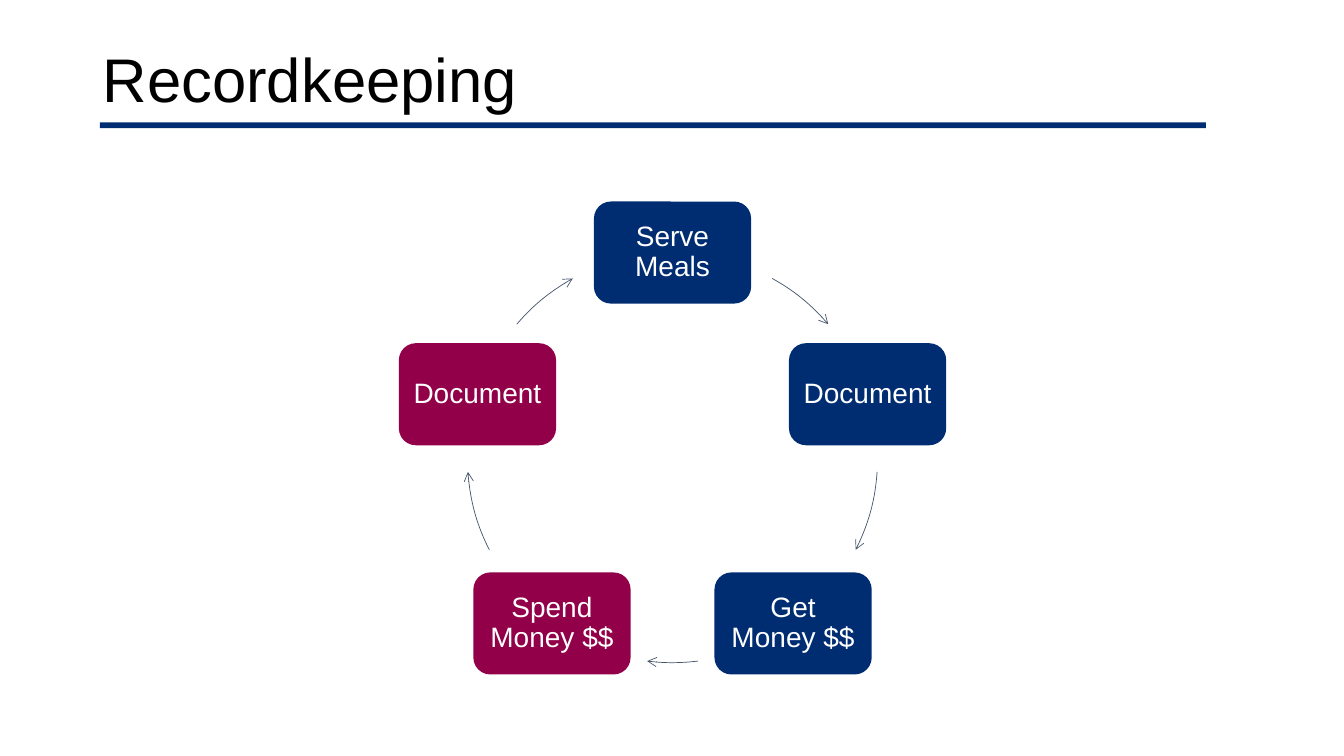
"""Build the recordkeeping cycle slide."""
import math
from dataclasses import dataclass

from lxml import etree
from pptx import Presentation
from pptx import util as u
from pptx.dml.color import RGBColor
from pptx.enum import shapes, text
from pptx.oxml import ns

COLORS = {"navy": "002D72", "plum": "910048", "slate": "44546A",
          "white": "FFFFFF", "black": "000000"}
FONT = "Arial"
SLIDE_WIDTH, SLIDE_HEIGHT = u.Inches(13.33), u.Inches(7.5)
CENTER_X, CENTER_Y = 50.04, 60.53
RADIUS_X, RADIUS_Y = 15.26, 27.12
STEP_WIDTH, STEP_HEIGHT = 11.7, 13.5
ADJUSTMENT_PER_DEGREE = 0.6


@dataclass(frozen=True)
class Area:
    """A place on the slide, in percent of its width and height."""
    left: float
    top: float
    width: float
    height: float

    def lengths(self) -> tuple[int, int, int, int]:
        """Return left, top, width and height in slide units."""
        return (round(SLIDE_WIDTH * self.left / 100),
                round(SLIDE_HEIGHT * self.top / 100),
                round(SLIDE_WIDTH * self.width / 100),
                round(SLIDE_HEIGHT * self.height / 100))


@dataclass(frozen=True)
class Step:
    """A step of the cycle and the angles of the arrow that leaves it."""
    label: str
    color: str
    arrow_start: float
    arrow_end: float


TITLE = Area(6.9, 1.2, 86.27, 19.33)
RULE = Area(7.43, 16.2, 82.3, 0.75)
RING = Area(CENTER_X - RADIUS_X, CENTER_Y - RADIUS_Y, 2 * RADIUS_X, 2 * RADIUS_Y)
STEPS = [
    Step("Serve Meals", "navy", 299.1, 319.4),
    Step("Document", "navy", 4, 26.7),
    Step("Get Money $$", "navy", 82.9, 97.1),
    Step("Spend Money $$", "plum", 153.3, 176),
    Step("Document", "plum", 220.6, 240.9),
]


def rgb(name: str) -> RGBColor:
    """Return a named colour."""
    return RGBColor.from_string(COLORS[name])


def add_text(shape, words: str, size: int, color: str, alignment) -> None:
    """Write one vertically centred paragraph in a shape."""
    frame = shape.text_frame
    frame.word_wrap = True
    frame.vertical_anchor = text.MSO_ANCHOR.MIDDLE
    paragraph = frame.paragraphs[0]
    paragraph.alignment = alignment
    paragraph.line_spacing = 0.9
    run = paragraph.add_run()
    run.text = words
    run.font.name = FONT
    run.font.size = u.Pt(size)
    run.font.color.rgb = rgb(color)


def add_block(slide, kind, area: Area, color: str):
    """Add a filled shape without outline or shadow."""
    shape = slide.shapes.add_shape(kind, *area.lengths())
    shape.shadow.inherit = False
    shape.fill.solid()
    shape.fill.fore_color.rgb = rgb(color)
    shape.line.fill.background()
    return shape


def add_step(slide, step: Step, index: int) -> None:
    """Add a step box at its place on the ring."""
    angle = math.radians(360 / len(STEPS) * index - 90)
    area = Area(CENTER_X + RADIUS_X * math.cos(angle) - STEP_WIDTH / 2,
                CENTER_Y + RADIUS_Y * math.sin(angle) - STEP_HEIGHT / 2,
                STEP_WIDTH, STEP_HEIGHT)
    shape = add_block(slide, shapes.MSO_SHAPE.ROUNDED_RECTANGLE, area, step.color)
    frame = shape.text_frame
    frame.margin_left = frame.margin_right = u.Inches(0.08)
    frame.margin_top = frame.margin_bottom = u.Inches(0.08)
    add_text(shape, step.label, 20, "white", text.PP_ALIGN.CENTER)


def add_arrow(slide, step: Step) -> None:
    """Add the curved arrow that leaves a step."""
    shape = slide.shapes.add_shape(shapes.MSO_SHAPE.ARC, *RING.lengths())
    shape.shadow.inherit = False
    shape.adjustments[0] = step.arrow_start * ADJUSTMENT_PER_DEGREE
    shape.adjustments[1] = step.arrow_end * ADJUSTMENT_PER_DEGREE
    shape.fill.background()
    shape.line.color.rgb = rgb("slate")
    shape.line.width = u.Pt(0.5)
    outline = shape.element.spPr.find(ns.qn("a:ln"))
    etree.SubElement(outline, ns.qn("a:tailEnd"), type="arrow")


def main() -> None:
    """Create the slide and save it."""
    presentation = Presentation()
    presentation.slide_width = SLIDE_WIDTH
    presentation.slide_height = SLIDE_HEIGHT
    slide = presentation.slides.add_slide(presentation.slide_layouts[6])
    for index, step in enumerate(STEPS):
        add_step(slide, step, index)
        add_arrow(slide, step)
    title = slide.shapes.add_textbox(*TITLE.lengths())
    add_text(title, "Recordkeeping", 44, "black", text.PP_ALIGN.LEFT)
    add_block(slide, shapes.MSO_SHAPE.RECTANGLE, RULE, "navy")
    presentation.save("out.pptx")


if __name__ == "__main__":
    main()
